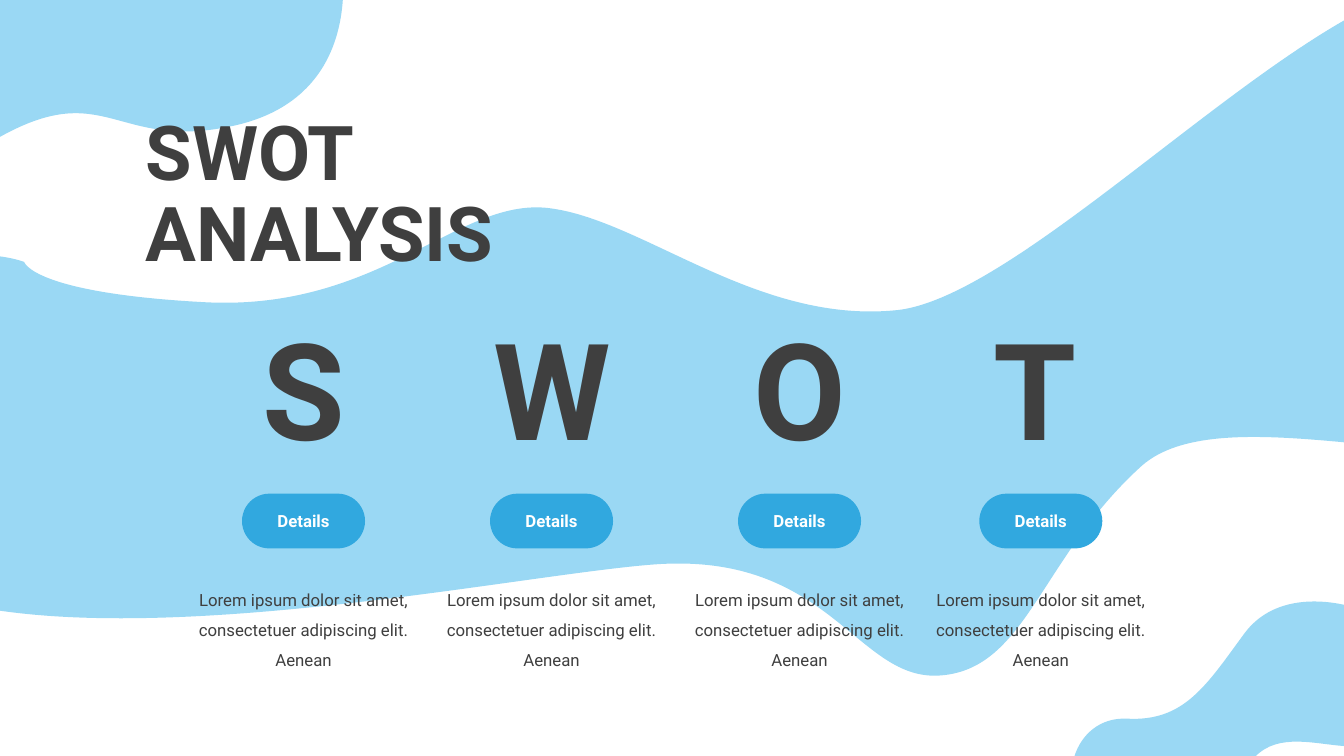
import pptx
import pptx.dml.color
import pptx.enum.shapes
import pptx.enum.text
import pptx.oxml.ns
import pptx.util

Cm = pptx.util.Cm
Pt = pptx.util.Pt
ALIGN = pptx.enum.text.PP_ALIGN

FONT = "Roboto"
DARK, WHITE, SKY, BLUE = "3F3F3F", "FFFFFF", "9AD8F4", "31A8DF"

TITLE = "SWOT\vANALYSIS"
BUTTON_LABEL = "Details"
DESCRIPTION = "Lorem ipsum dolor sit amet, consectetuer adipiscing elit. Aenean"
COLUMNS = [
    {"letter": "S", "letter_center": 7.65, "center": 7.65},
    {"letter": "W", "letter_center": 13.89, "center": 13.9},
    {"letter": "O", "letter_center": 20.17, "center": 20.15},
    {"letter": "T", "letter_center": 26.09, "center": 26.23},
]

BLOBS = [
    {"start": (0.61, 6.6), "segments": [
        [(0.61, 6.6), (0.79, 7.39), (5.23, 7.62)],
        [(9.68, 7.82), (11.61, 4.88), (13.94, 5.26)],
        [(16.28, 5.61), (19.1, 8.15), (22.56, 7.82)],
        [(26.04, 7.52), (33.48, -0.91), (36.86, -0.41)],
        [(40.21, 0.08), (44.75, 5.11), (42.52, 9.42)],
        [(40.26, 13.72), (31.32, 9.42), (28.75, 11.76)],
        [(26.21, 14.07), (25.88, 16.84), (23.72, 17.02)],
        [(21.59, 17.2), (20.96, 13.92), (16.54, 14.22)],
        [(12.14, 14.53), (-2.77, 17.88), (-4.45, 12.75)],
        [(-6.1, 7.62), (-1.6, 5.84), (0.61, 6.6)],
    ]},
    {"start": (31.37, 15.95), "segments": [
        [(30.4, 17.27), (29.85, 18.19), (28.4, 18.11)],
        [(27.71, 18.08), (27.25, 18.52), (27.08, 19.05)],
        [(31.65, 19.05)],
        [(32.23, 18.47), (33.15, 18.75), (33.87, 18.8)],
        [(33.87, 15.24)],
        [(33.27, 15.11), (32.08, 15.01), (31.37, 15.95)],
    ]},
    {"start": (0, 3.45), "segments": [
        [(2.64, 1.98), (2.92, 3.76), (5.74, 3.2)],
        [(8, 2.77), (8.56, 1.19), (8.64, 0)],
        [(0, 0)],
    ]},
]


def color(hex_string):
    return pptx.dml.color.RGBColor.from_string(hex_string)


def paint(shape, fill):
    shape.shadow.inherit = False
    shape.fill.solid()
    shape.fill.fore_color.rgb = color(fill)
    shape.line.fill.background()


def write(shape, text, size, text_color=DARK, bold=False, align=ALIGN.CENTER, spacing=1.0):
    shape.text_frame.word_wrap = True
    paragraph = shape.text_frame.paragraphs[0]
    paragraph.text = text
    paragraph.alignment = align
    paragraph.line_spacing = spacing
    paragraph.font.name = FONT
    paragraph.font.size = Pt(size)
    paragraph.font.bold = bold
    paragraph.font.color.rgb = color(text_color)


def add_text(slide, left, top, width, height, text, size, **style):
    box = slide.shapes.add_textbox(Cm(left), Cm(top), Cm(width), Cm(height))
    write(box, text, size, **style)


def add_blob(slide, start, segments):
    builder = slide.shapes.build_freeform(Cm(start[0]), Cm(start[1]))
    anchors = [segment[-1] for segment in segments]
    builder.add_line_segments([(Cm(x), Cm(y)) for x, y in anchors], close=True)
    shape = builder.convert_to_shape()
    paint(shape, SKY)
    qn = pptx.oxml.ns.qn
    lines = list(shape.element.iter(qn("a:lnTo")))
    for line, segment in zip(lines, segments):
        if len(segment) == 1:
            continue
        line.tag = qn("a:cubicBezTo")
        for index, (x, y) in enumerate(segment[:-1]):
            point = line.makeelement(qn("a:pt"), {
                "x": str(Cm(x) - shape.left),
                "y": str(Cm(y) - shape.top),
            })
            line.insert(index, point)


def add_button(slide, center):
    width = 3.1
    button = slide.shapes.add_shape(
        pptx.enum.shapes.MSO_SHAPE.ROUNDED_RECTANGLE,
        Cm(center - width / 2), Cm(12.44), Cm(width), Cm(1.38))
    button.adjustments[0] = 0.5
    paint(button, BLUE)
    button.text_frame.vertical_anchor = pptx.enum.text.MSO_ANCHOR.MIDDLE
    write(button, BUTTON_LABEL, 12, text_color=WHITE, bold=True)


def add_column(slide, letter, letter_center, center):
    letter_width, description_width = 3.4, 5.82
    add_text(slide, letter_center - letter_width / 2, 7.6, letter_width, 4.37,
             letter, 96, bold=True)
    add_button(slide, center)
    add_text(slide, center - description_width / 2, 14.48, description_width, 1.8,
             DESCRIPTION, 12, spacing=1.5)


def main():
    presentation = pptx.Presentation()
    presentation.slide_width = Cm(33.87)
    presentation.slide_height = Cm(19.05)
    slide = presentation.slides.add_slide(presentation.slide_layouts[6])
    for blob in BLOBS:
        add_blob(slide, **blob)
    add_text(slide, 3.43, 2.77, 14.27, 4.88, TITLE, 54,
             bold=True, align=ALIGN.LEFT, spacing=0.9)
    for column in COLUMNS:
        add_column(slide, **column)
    presentation.save("out.pptx")


if __name__ == "__main__":
    main()
